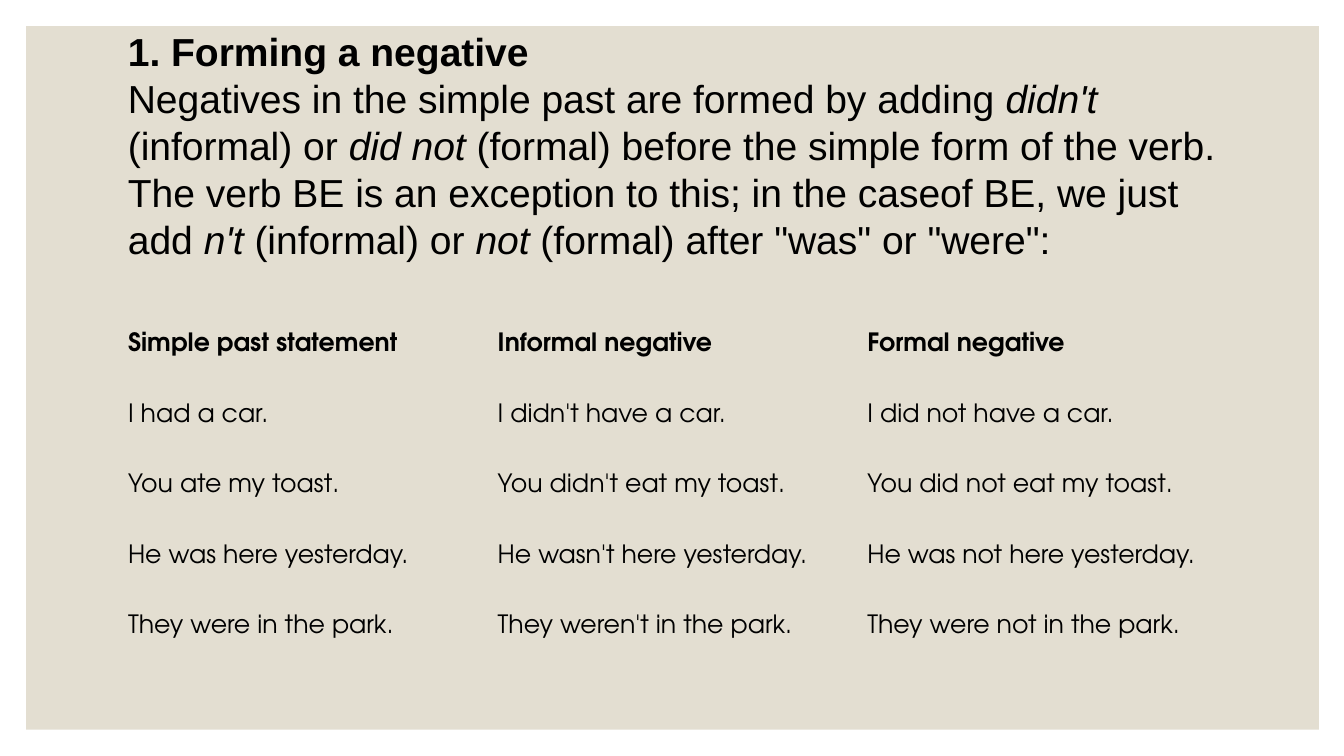
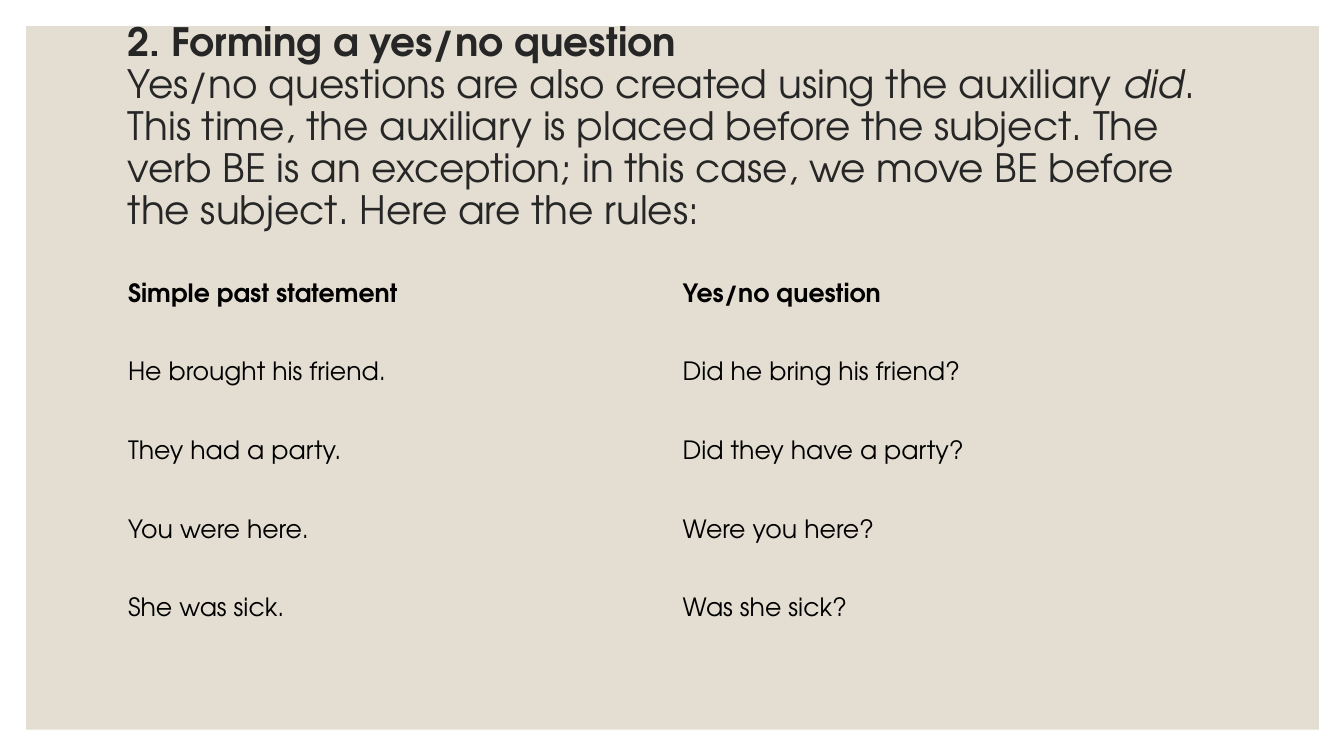
"""Build two grammar slides on negatives and yes/no questions in the simple past."""
from pptx import Presentation
from pptx.dml.color import RGBColor
from pptx.enum.shapes import MSO_SHAPE
from pptx.enum.text import MSO_ANCHOR
from pptx.oxml.ns import qn
from pptx.util import Inches, Pt

COLORS = {"panel": "E3DED1", "black": "000000", "charcoal": "262626"}
TABLE_FONT = "TeX Gyre Adventor"
NO_GRID_STYLE = "{2D5ABB26-0587-4C30-8999-92F81FD0307C}"
LEFT, WIDTH = 1.17, 11

NEGATIVE_RULE = [
    ("Negatives in the simple past are formed by adding ", False),
    ("didn't", True),
    (" (informal) or ", False),
    ("did not", True),
    (" (formal) before the simple form of the verb. The verb BE is an exception "
     "to this; in the caseof BE, we just add ", False),
    ("n't", True),
    (" (informal) or ", False),
    ("not", True),
    (" (formal) after \"was\" or \"were\":", False),
]
QUESTION_RULE = [
    ("Yes/no questions are also created using the auxiliary ", False),
    ("did", True),
    (". This time, the auxiliary is placed before the subject. The verb BE is an "
     "exception; in this case, we move BE before the subject. Here are the rules:", False),
]
NEGATIVE_ROWS = [
    ("Simple past statement", "Informal negative", "Formal negative"),
    ("I had a car.", "I didn't have a car.", "I did not have a car."),
    ("You ate my toast.", "You didn't eat my toast.", "You did not eat my toast."),
    ("He was here yesterday.", "He wasn't here yesterday.", "He was not here yesterday."),
    ("They were in the park.", "They weren't in the park.", "They were not in the park."),
]
QUESTION_ROWS = [
    ("Simple past statement", "Yes/no question"),
    ("He brought his friend.", "Did he bring his friend?"),
    ("They had a party.", "Did they have a party?"),
    ("You were here.", "Were you here?"),
    ("She was sick.", "Was she sick?"),
]


def color(name):
    return RGBColor.from_string(COLORS[name])


def style_font(font, name, size, color_name):
    font.name = name
    font.size = Pt(size)
    font.color.rgb = color(color_name)


def add_page(deck):
    page = deck.slides.add_slide(deck.slide_layouts[6])
    panel = page.shapes.add_shape(
        MSO_SHAPE.RECTANGLE, Inches(0.26), Inches(0.26), Inches(12.82), Inches(6.98))
    panel.shadow.inherit = False
    panel.fill.solid()
    panel.fill.fore_color.rgb = color("panel")
    panel.line.fill.background()
    return page


def add_rule(page, top, heading, spans, font_name, color_name, line_points):
    box = page.shapes.add_textbox(Inches(LEFT), Inches(top), Inches(WIDTH), Inches(2.45))
    frame = box.text_frame
    frame.word_wrap = True
    frame.vertical_anchor = MSO_ANCHOR.TOP
    para = frame.paragraphs[0]
    para.line_spacing = Pt(line_points)
    style_font(para.font, font_name, 27.9, color_name)
    title = para.add_run()
    title.text = heading
    title.font.bold = True
    para.add_line_break()
    for text, italic in spans:
        span = para.add_run()
        span.text = text
        span.font.italic = italic


def add_examples(page, top, row_height, rows):
    columns = len(rows[0])
    table = page.shapes.add_table(
        len(rows), columns, Inches(LEFT), Inches(top),
        Inches(WIDTH), Inches(row_height * len(rows))).table
    table._tbl.tblPr.find(qn("a:tableStyleId")).text = NO_GRID_STYLE
    table.horz_banding = False
    for column in table.columns:
        column.width = Inches(WIDTH / columns)
    for row_index, row in enumerate(rows):
        table.rows[row_index].height = Inches(row_height)
        for column_index, text in enumerate(row):
            cell = table.cell(row_index, column_index)
            cell.fill.background()
            cell.vertical_anchor = MSO_ANCHOR.MIDDLE
            cell.text = text
            font = cell.text_frame.paragraphs[0].font
            style_font(font, TABLE_FONT, 18, "black")
            font.bold = row_index == 0


def main():
    deck = Presentation()
    deck.slide_width, deck.slide_height = Inches(13.33), Inches(7.5)

    negatives = add_page(deck)
    add_rule(negatives, 0.22, "1. Forming a negative", NEGATIVE_RULE, "Arial", "black", 33.6)
    add_examples(negatives, 3.07, 0.7, NEGATIVE_ROWS)

    questions = add_page(deck)
    add_rule(questions, 0.17, "2. Forming a yes/no question", QUESTION_RULE,
             TABLE_FONT, "charcoal", 30)
    add_examples(questions, 2.54, 0.78, QUESTION_ROWS)

    deck.save("out.pptx")


if __name__ == "__main__":
    main()
